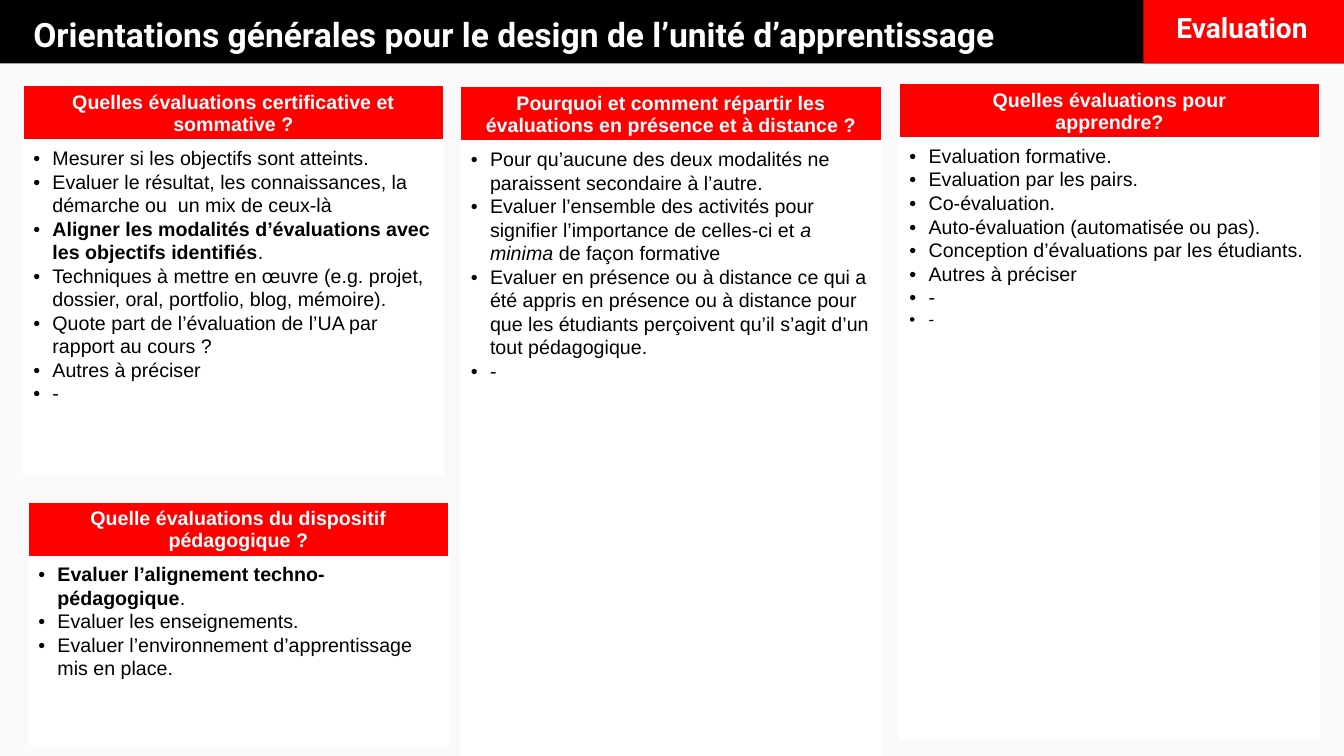
from lxml import etree
from pptx import Presentation
from pptx.dml.color import RGBColor
from pptx.enum.shapes import MSO_SHAPE
from pptx.enum.text import MSO_ANCHOR, MSO_AUTO_SIZE, PP_ALIGN
from pptx.oxml.ns import qn
from pptx.util import Inches, Pt

BLACK = RGBColor(0x00, 0x00, 0x00)
WHITE = RGBColor(0xFF, 0xFF, 0xFF)
RED = RGBColor(0xFF, 0x00, 0x00)
PALE_GREY = RGBColor(0xFA, 0xFA, 0xFA)

HEADING = "Orientations générales pour le design de l’unité d’apprentissage"
SECTION = "Evaluation"

# Each item is a list of (text, style) runs; style is "", "bold" or "italic".
PANELS = [
    {
        "place": (0.28, 4.98, 2.4),
        "question": "Quelle évaluations du dispositif pédagogique ?",
        "items": [
            [("Evaluer l’alignement techno-pédagogique", "bold"), (".", "")],
            [("Evaluer les enseignements.", "")],
            [("Evaluer l’environnement d’apprentissage mis en place.", "")],
        ],
    },
    {
        "place": (0.23, 0.85, 3.86),
        "question": "Quelles évaluations certificative et sommative ?",
        "items": [
            [("Mesurer si les objectifs sont atteints.", "")],
            [("Evaluer le résultat, les connaissances, la démarche ou  un mix de ceux-là", "")],
            [("Aligner les modalités d’évaluations avec les objectifs identifiés", "bold"), (".", "")],
            [("Techniques à mettre en œuvre (e.g. projet, dossier, oral, portfolio, blog, mémoire).", "")],
            [("Quote part de l’évaluation de l’UA par rapport au cours ?", "")],
            [("Autres à préciser", "")],
            [("-", "")],
        ],
    },
    {
        "place": (8.92, 0.83, 6.5),
        "question": "Quelles évaluations pour\napprendre?",
        "items": [
            [("Evaluation formative.", "")],
            [("Evaluation par les pairs.", "")],
            [("Co-évaluation.", "")],
            [("Auto-évaluation (automatisée ou pas).", "")],
            [("Conception d’évaluations par les étudiants.", "")],
            [("Autres à préciser", "")],
            [("-", "")],
            [("-", "")],
        ],
        "last_size": 12,
    },
    {
        "place": (4.57, 0.86, 6.64),
        "question": "Pourquoi et comment répartir les évaluations en présence et à distance ?",
        "items": [
            [("Pour qu’aucune des deux modalités ne paraissent secondaire à l’autre.", "")],
            [
                ("Evaluer l’ensemble des activités pour signifier l’importance de celles-ci et ", ""),
                ("a minima ", "italic"),
                ("de façon formative", ""),
            ],
            [("Evaluer en présence ou à distance ce qui a été appris en présence ou à distance "
              "pour que les étudiants perçoivent qu’il s’agit d’un tout pédagogique.", "")],
            [("-", "")],
        ],
    },
]

PANEL_WIDTH = 4.17
QUESTION_HEIGHT = 0.55
SPARE_HEIGHT = 0.4
TEXT_SIZE = 14
BULLET_INDENT = Inches(0.19)


def set_font(paragraph, name, size, color, bold=None):
    font = paragraph.font
    font.name, font.size, font.bold = name, Pt(size), bold
    font.color.rgb = color


def add_bullet(paragraph):
    properties = paragraph._p.get_or_add_pPr()
    properties.set("marL", str(BULLET_INDENT))
    properties.set("indent", str(-BULLET_INDENT))
    face = etree.Element(qn("a:buFont"), typeface="Arial")
    bullet = etree.Element(qn("a:buChar"), char="•")
    run_defaults = properties.find(qn("a:defRPr"))
    run_defaults.addprevious(face)
    run_defaults.addprevious(bullet)


def style_cell(cell, color, bottom_width=1):
    """Give the cell white borders and a solid fill."""
    properties = cell._tc.get_or_add_tcPr()
    for side, width in (("L", 1), ("R", 1), ("T", 1), ("B", bottom_width)):
        line = etree.SubElement(properties, qn("a:ln" + side), w=str(Pt(width)))
        fill = etree.SubElement(line, qn("a:solidFill"))
        etree.SubElement(fill, qn("a:srgbClr"), val=str(WHITE))
    cell.fill.solid()
    cell.fill.fore_color.rgb = color


def add_bar(slide, color, *place):
    bar = slide.shapes.add_shape(MSO_SHAPE.RECTANGLE, *map(Inches, place))
    bar.shadow.inherit = False
    bar.fill.solid()
    bar.fill.fore_color.rgb = color
    bar.line.fill.background()
    return bar


def place_heading(box, text, size, *place):
    box.left, box.top, box.width, box.height = map(Inches, place)
    frame = box.text_frame
    frame.text = text
    frame.word_wrap = True
    frame.auto_size = MSO_AUTO_SIZE.NONE
    frame.vertical_anchor = MSO_ANCHOR.TOP
    heading = frame.paragraphs[0]
    heading.alignment = PP_ALIGN.LEFT
    heading.line_spacing = 1.0
    set_font(heading, "Roboto", size, WHITE, bold=True)


def add_panel(slide, place, question, items, last_size=TEXT_SIZE):
    left, top, height = place
    table = slide.shapes.add_table(
        3, 1, Inches(left), Inches(top), Inches(PANEL_WIDTH), Inches(height)
    ).table
    table.first_row = table.horz_banding = False
    list_height = height - QUESTION_HEIGHT - SPARE_HEIGHT
    for row, row_height in zip(table.rows, (QUESTION_HEIGHT, list_height, SPARE_HEIGHT)):
        row.height = Inches(row_height)

    question_cell, list_cell, spare_cell = (table.cell(row, 0) for row in range(3))
    style_cell(question_cell, RED, bottom_width=3)
    style_cell(list_cell, WHITE)
    style_cell(spare_cell, WHITE)

    question_cell.vertical_anchor = MSO_ANCHOR.MIDDLE
    question_cell.text_frame.text = question
    for line in question_cell.text_frame.paragraphs:
        line.alignment = PP_ALIGN.CENTER
        set_font(line, "Arial", TEXT_SIZE, WHITE, bold=True)

    frame = list_cell.text_frame
    for number, runs in enumerate(items, start=1):
        item = frame.paragraphs[0] if number == 1 else frame.add_paragraph()
        item.line_spacing = 1.07
        set_font(item, "Arial", last_size if number == len(items) else TEXT_SIZE, BLACK)
        add_bullet(item)
        for text, style in runs:
            run = item.add_run()
            run.text = text
            if style:
                setattr(run.font, style, True)


def main():
    deck = Presentation()
    deck.slide_width, deck.slide_height = Inches(13.33), Inches(7.5)
    slide = deck.slides.add_slide(deck.slide_layouts[5])
    slide.background.fill.solid()
    slide.background.fill.fore_color.rgb = PALE_GREY

    title = slide.shapes.title
    title_bar = add_bar(slide, BLACK, 0, 0, 13.33, 0.63)
    title._element.addprevious(title_bar._element)
    place_heading(title, HEADING, 24, 0.23, 0.09, 10.6, 0.5)

    add_bar(slide, RED, 11.34, -0.01, 1.99, 0.64)
    section = slide.shapes.add_textbox(0, 0, 0, 0)
    place_heading(section, SECTION, 20, 11.57, 0.06, 1.76, 0.44)

    for panel in PANELS:
        add_panel(slide, **panel)
    deck.save("out.pptx")


if __name__ == "__main__":
    main()
